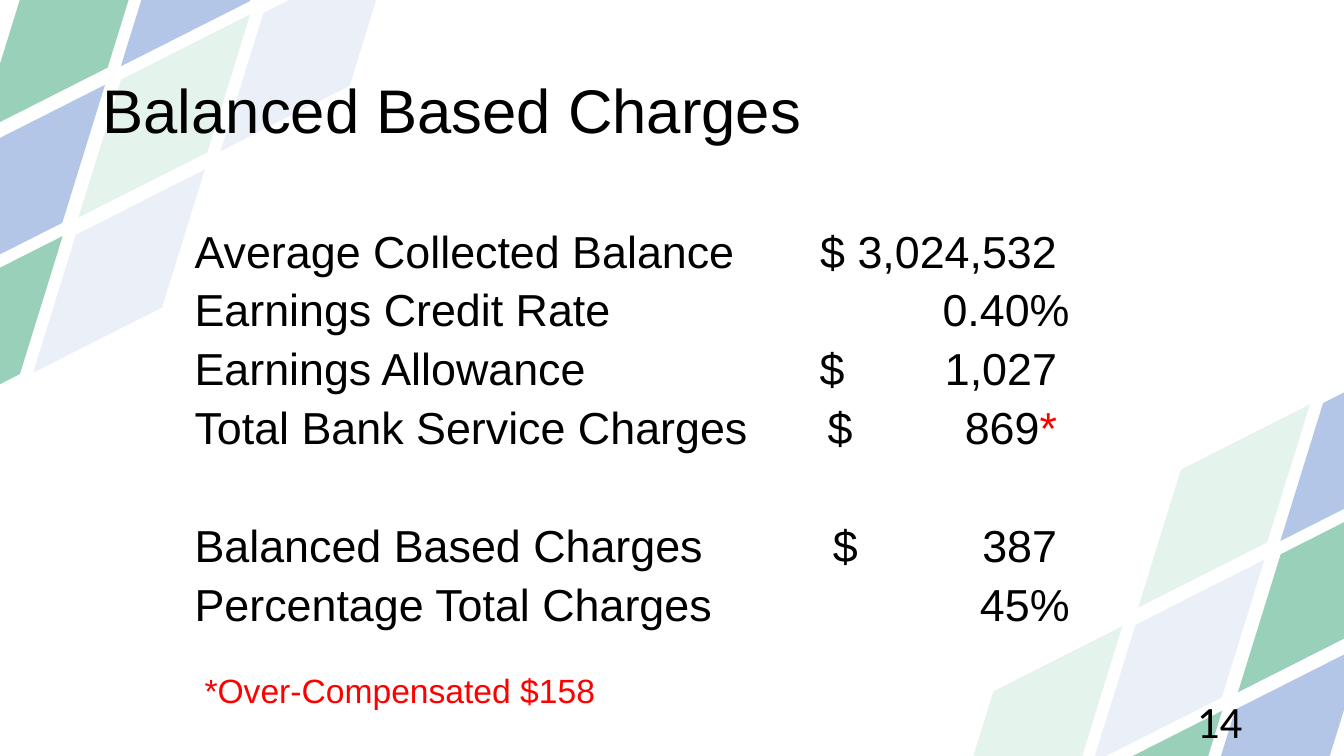
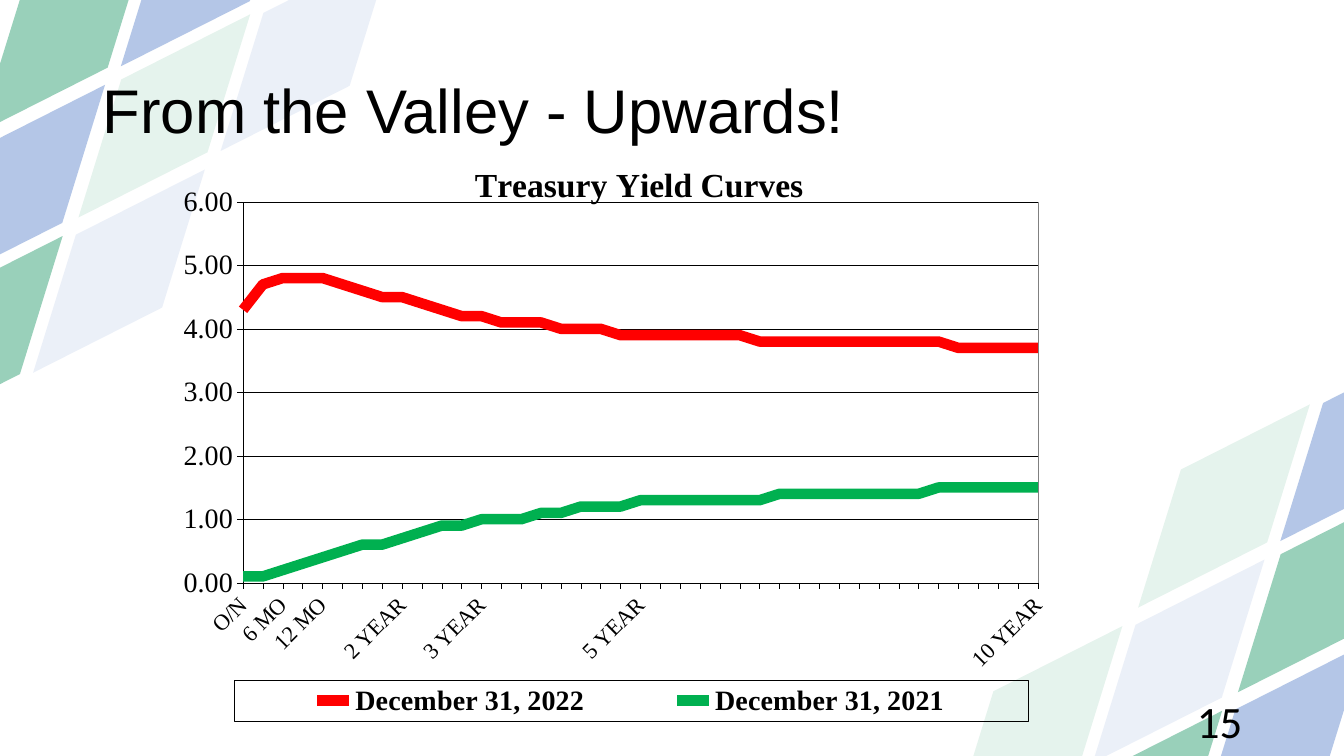
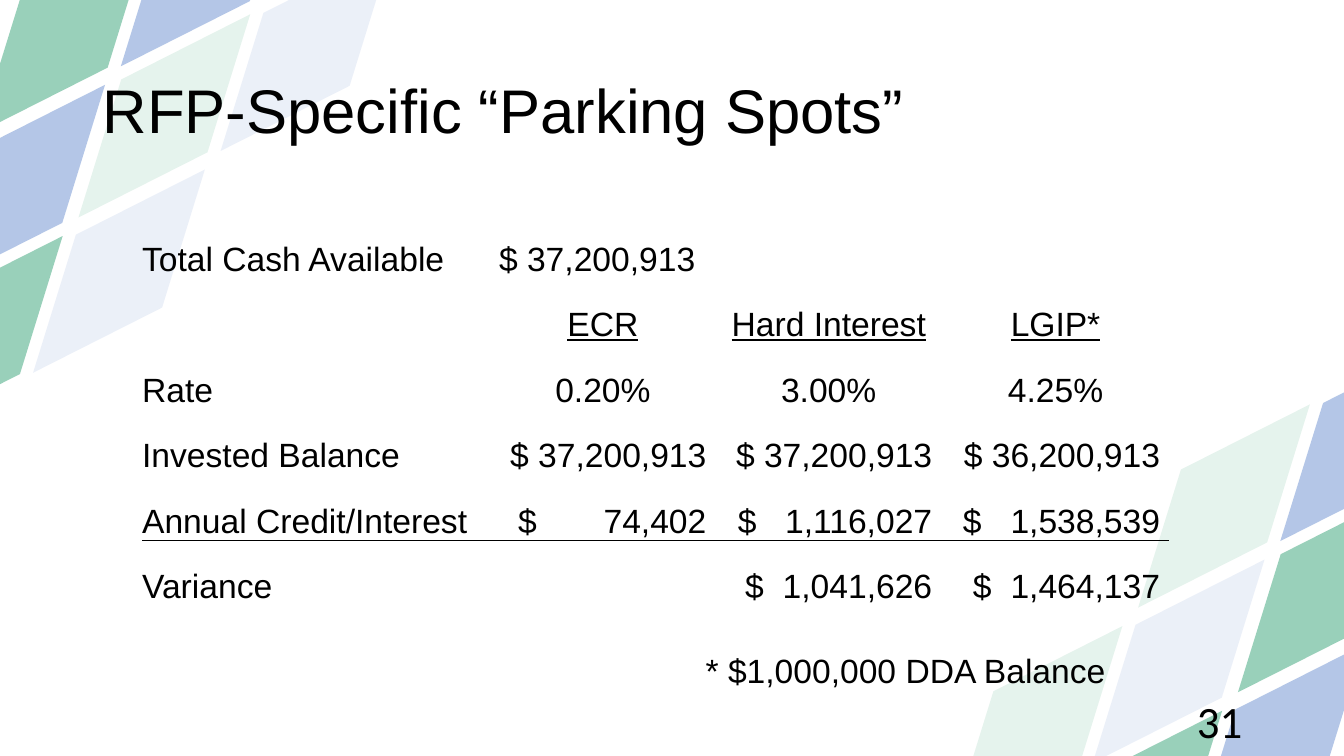
"""Build three treasury slides: balance charges, yield curves and parking spots."""
from dataclasses import dataclass
from itertools import pairwise, product
from typing import Any

from lxml import etree
from pptx import Presentation
from pptx.chart.data import CategoryChartData
from pptx.dml.color import RGBColor
from pptx.enum.chart import XL_CHART_TYPE, XL_LEGEND_POSITION, XL_TICK_MARK
from pptx.enum.shapes import MSO_SHAPE
from pptx.enum.text import MSO_ANCHOR, PP_ALIGN
from pptx.oxml.ns import qn
from pptx.util import Inches, Pt

LEFT, MID, RIGHT = PP_ALIGN.LEFT, PP_ALIGN.CENTER, PP_ALIGN.RIGHT
TOP, CENTER, BASE = MSO_ANCHOR.TOP, MSO_ANCHOR.MIDDLE, MSO_ANCHOR.BOTTOM
DIAMOND = MSO_SHAPE.DIAMOND
LINE = XL_CHART_TYPE.LINE
BELOW = XL_LEGEND_POSITION.BOTTOM
OUT = XL_TICK_MARK.OUTSIDE

INK = {
    "black": "000000",
    "red": "FF0000",
    "lime": "00B050",
    "green": "008A54",
    "blue": "4472C4",
    "gray": "808080",
}
SANS, SERIF, DIGIT = "Arial", "Times New Roman", "Calibri"
PLAIN = "{2D5ABB26-0587-4C30-8999-92F81FD0307C}"


@dataclass(frozen=True)
class Patch:
    """A group of tilted diamonds; a tone of 0 leaves a gap."""
    left: float
    top: float
    tones: tuple[int, ...]


@dataclass(frozen=True)
class Cell:
    """A table cell; a tab pushes the amount to the right edge."""
    text: str = ""
    side: Any = LEFT
    lead: float = 0.0
    pad: bool = False
    under: bool = False
    mark: str = ""


@dataclass(frozen=True)
class Grid:
    """A borderless table."""
    left: float
    top: float
    high: float
    cols: tuple[float, ...]
    size: int
    rows: tuple[tuple[Cell, ...], ...]
    rule: int = -1


@dataclass(frozen=True)
class Curve:
    """A yield curve given at its known terms."""
    name: str
    hue: str
    rates: tuple[float, ...]


PATCHES = (
    Patch(11.58, 3.7, (10, 40, 40, 0, 10, 10, 40, 40)),
    Patch(0.08, -1.01, (40, 40, 10, 10, 0, 40, 40, 10)),
)

CHARGES = Grid(1.93, 2.17, 4.09, (5.57, 3.11), 32, (
    (Cell("Average Collected Balance"), Cell("$ 3,024,532", RIGHT, pad=True)),
    (Cell("Earnings Credit Rate"), Cell("0.40%", RIGHT)),
    (Cell("Earnings Allowance"), Cell("$\t1,027", lead=0.63)),
    (Cell("Total Bank Service Charges"), Cell("$\t869", lead=0.71, mark="*")),
    (Cell(), Cell()),
    (Cell("Balanced Based Charges"), Cell("$\t387", lead=0.76)),
    (Cell("Percentage Total Charges"), Cell("45%", RIGHT)),
))

SPOTS = Grid(1.41, 2.11, 3.9, (3.45, 2.24, 2.24, 2.26), 24, (
    (Cell("Total Cash Available"), Cell("$ 37,200,913", lead=0.09), Cell(), Cell()),
    (Cell(), *(Cell(t, MID, under=True) for t in ("ECR", "Hard Interest", "LGIP*"))),
    (Cell("Rate"), *(Cell(t, MID) for t in ("0.20%", "3.00%", "4.25%"))),
    (Cell("Invested Balance"),
     *(Cell(t, RIGHT, pad=True)
       for t in ("$ 37,200,913", "$ 37,200,913", "$ 36,200,913"))),
    (Cell("Annual Credit/Interest"), Cell("$\t74,402", lead=0.28),
     Cell("$\t1,116,027", lead=0.22), Cell("$\t1,538,539", lead=0.21)),
    (Cell("Variance"), Cell(), Cell("$\t1,041,626", lead=0.29),
     Cell("$\t1,464,137", lead=0.31)),
), rule=4)

TERMS = {0: "O/N", 1: "3 MO", 2: "6 MO", 4: "12 MO", 8: "2 YEAR",
         12: "3 YEAR", 20: "5 YEAR", 40: "10 YEAR"}
CURVES = (
    Curve("December 31, 2022", "red",
          (4.34, 4.67, 4.81, 4.78, 4.45, 4.18, 3.9, 3.71)),
    Curve("December 31, 2021", "lime",
          (0.08, 0.06, 0.19, 0.39, 0.73, 0.975, 1.26, 1.52)),
)


def tint(hue: str) -> RGBColor:
    """Return a named colour."""
    return RGBColor.from_string(INK[hue])


def style(font: Any, size: int, face: str = SANS, hue: str = "black",
          bold: bool = False) -> None:
    """Set the look of a font."""
    font.size, font.name, font.bold = Pt(size), face, bold
    font.color.rgb = tint(hue)


def stroke(line: Any, hue: str = "black", width: float = 0.25) -> None:
    """Set the colour and width of a line."""
    line.color.rgb = tint(hue)
    line.width = Pt(width)


def label(slide: Any, text: str, box: tuple[float, ...], size: int,
          face: str = SANS, hue: str = "black", side: Any = LEFT,
          anchor: Any = TOP, space: float = 1.0) -> None:
    """Add a one-line text box."""
    frame = slide.shapes.add_textbox(*map(Inches, box)).text_frame
    frame.word_wrap, frame.vertical_anchor = True, anchor
    frame.text = text
    para = frame.paragraphs[0]
    para.alignment, para.line_spacing = side, space
    style(para.runs[0].font, size, face, hue)


def scatter(slide: Any, patch: Patch) -> None:
    """Draw one group of diamonds in two blocks of two by two."""
    for tone, (block, row, col) in zip(patch.tones, product(range(2), repeat=3)):
        if not tone:
            continue
        left = patch.left - 1.86 * block + 0.99 * row + 1.41 * col
        top = patch.top + 2.2 * block + 0.84 * row - 0.66 * col
        gem = slide.shapes.add_shape(
            DIAMOND, Inches(left), Inches(top), Inches(1.12), Inches(2.64))
        gem.rotation = 40.2
        gem.shadow.inherit = False
        gem.line.fill.background()
        gem.fill.solid()
        gem.fill.fore_color.rgb = tint("blue" if col else "green")
        shade = gem.fill._xPr.find(".//" + qn("a:srgbClr"))
        etree.SubElement(shade, qn("a:alpha"), val=str(tone * 1000))


def start(deck: Any, title: str, page: int) -> Any:
    """Add a slide with its diamonds, title and page number."""
    slide = deck.slides.add_slide(deck.slide_layouts[6])
    for patch in PATCHES:
        scatter(slide, patch)
    label(slide, title, (0.92, 0.4, 11.5, 1.45), 44, anchor=CENTER, space=0.9)
    label(slide, str(page), (9.42, 6.95, 3, 0.4), 32, DIGIT,
          side=RIGHT, anchor=CENTER)
    return slide


def edge(box: Any, name: str) -> None:
    """Give a cell a thin black border on one side."""
    line = etree.Element(qn(name), w=str(Pt(0.5)))
    fill = etree.SubElement(line, qn("a:solidFill"))
    etree.SubElement(fill, qn("a:srgbClr"), val=INK["black"])
    box._tc.get_or_add_tcPr().insert(0, line)


def write(box: Any, cell: Cell, width: float, size: int) -> None:
    """Fill one table cell."""
    gap = 0.28 * size / 72
    box.fill.background()
    box.vertical_anchor = BASE
    box.margin_top = box.margin_bottom = 0
    box.margin_left = Inches(cell.lead)
    box.margin_right = Inches(gap if cell.pad else 0)
    if not cell.text:
        return
    box.text_frame.text = cell.text
    para = box.text_frame.paragraphs[0]
    para.alignment = cell.side
    if "\t" in cell.text:
        tabs = etree.SubElement(para._p.get_or_add_pPr(), qn("a:tabLst"))
        stop = Inches(width - cell.lead - gap)
        etree.SubElement(tabs, qn("a:tab"), pos=str(stop), algn="r")
    for run in para.runs:
        style(run.font, size)
        run.font.underline = cell.under
    if cell.mark:
        run = para.add_run()
        run.text = cell.mark
        style(run.font, size, hue="red")


def draw_grid(slide: Any, grid: Grid) -> None:
    """Add a table without fills or a grid."""
    count = len(grid.rows)
    table = slide.shapes.add_table(
        count, len(grid.cols), Inches(grid.left), Inches(grid.top),
        Inches(sum(grid.cols)), Inches(grid.high)).table
    table.first_row = table.horz_banding = False
    table._tbl.tblPr.find(qn("a:tableStyleId")).text = PLAIN
    for col, width in zip(table.columns, grid.cols):
        col.width = Inches(width)
    for r, row in enumerate(grid.rows):
        table.rows[r].height = Inches(grid.high / count)
        for c, cell in enumerate(row):
            box = table.cell(r, c)
            write(box, cell, grid.cols[c], grid.size)
            if r == grid.rule:
                edge(box, "a:lnB")
            elif r == grid.rule + 1 and grid.rule >= 0:
                edge(box, "a:lnT")


def spread(rates: tuple[float, ...]) -> list[float]:
    """Fill the quarters between known terms by straight lines."""
    vals = [round(rates[0], 1)]
    for (a, low), (b, high) in pairwise(zip(TERMS, rates)):
        vals += [round(low + (high - low) * k / (b - a), 1)
                 for k in range(1, b - a + 1)]
    return vals


def place(node: Any, index: int, inner: bool = False, **spots: float) -> None:
    """Set the manual layout of a chart part."""
    for old in node.findall(qn("c:layout")):
        node.remove(old)
    layout = etree.Element(qn("c:layout"))
    manual = etree.SubElement(layout, qn("c:manualLayout"))
    if inner:
        etree.SubElement(manual, qn("c:layoutTarget"), val="inner")
    for key in ("x", "y"):
        etree.SubElement(manual, qn(f"c:{key}Mode"), val="edge")
    for key, val in spots.items():
        etree.SubElement(manual, qn(f"c:{key}"), val=str(val))
    node.insert(index, layout)


def outline(props: Any, hue: str) -> None:
    """Give a chart part no fill and a thin outline."""
    etree.SubElement(props, qn("a:noFill"))
    line = etree.SubElement(props, qn("a:ln"), w=str(Pt(0.25)))
    fill = etree.SubElement(line, qn("a:solidFill"))
    etree.SubElement(fill, qn("a:srgbClr"), val=INK[hue])


def draw_chart(slide: Any) -> None:
    """Add the line chart of both yield curves."""
    data = CategoryChartData(number_format="0.00")
    data.categories = [TERMS.get(k, "") for k in range(max(TERMS) + 1)]
    for curve in CURVES:
        data.add_series(curve.name, spread(curve.rates))
    chart = slide.shapes.add_chart(
        LINE, Inches(1.67), Inches(1.5), Inches(9.03), Inches(5.85), data).chart
    style(chart.font, 10)

    chart.has_title = True
    frame = chart.chart_title.text_frame
    frame.text = "Treasury Yield Curves"
    style(frame.paragraphs[0].runs[0].font, 24, SERIF, bold=True)
    place(chart.chart_title._element, 1, x=0.33, y=0.01)

    chart.has_legend = True
    legend = chart.legend
    legend.position, legend.include_in_layout = BELOW, False
    style(legend.font, 20, SERIF, bold=True)
    place(legend._element, 1, x=0.072, y=0.897, w=0.872, h=0.07)
    frame = etree.Element(qn("c:spPr"))
    legend._element.find(qn("c:txPr")).addprevious(frame)
    outline(frame, "black")

    terms, rates = chart.category_axis, chart.value_axis
    for axis, size in ((terms, 16), (rates, 20)):
        style(axis.tick_labels.font, size, SERIF)
        stroke(axis.format.line)
        axis.major_tick_mark = OUT
    terms._element.find(qn("c:txPr")).find(qn("a:bodyPr")).set("rot", "-2700000")
    rates.minimum_scale, rates.maximum_scale, rates.major_unit = 0, 6, 1
    rates.tick_labels.number_format = "0.00"
    rates.tick_labels.number_format_is_linked = False
    rates.has_major_gridlines = True
    stroke(rates.major_gridlines.format.line)
    node = rates._element
    for old in node.findall(qn("c:crossBetween")):
        node.remove(old)
    cross = etree.Element(qn("c:crossBetween"), val="midCat")
    node.find(qn("c:crosses")).addnext(cross)

    plot = chart.plots[0]
    plot.vary_by_categories = False
    for line, curve in zip(plot.series, CURVES):
        line.smooth = False
        stroke(line.format.line, curve.hue, 7.5)
    area = chart._chartSpace.find(".//" + qn("c:plotArea"))
    place(area, 0, True, x=0.082, y=0.086, w=0.873, h=0.646)
    outline(etree.SubElement(area, qn("c:spPr")), "gray")


def main() -> None:
    """Build and save the deck."""
    deck = Presentation()
    deck.slide_width, deck.slide_height = Inches(13.33), Inches(7.5)

    slide = start(deck, "Balanced Based Charges", 14)
    draw_grid(slide, CHARGES)
    label(slide, "*Over-Compensated $158", (1.93, 6.6, 5.78, 0.5), 24, hue="red")

    slide = start(deck, "From the Valley - Upwards!", 15)
    draw_chart(slide)

    slide = start(deck, "RFP-Specific “Parking Spots”", 31)
    draw_grid(slide, SPOTS)
    label(slide, "* $1,000,000 DDA Balance", (6.9, 6.4, 4.81, 0.5), 24)

    deck.save("out.pptx")


if __name__ == "__main__":
    main()
